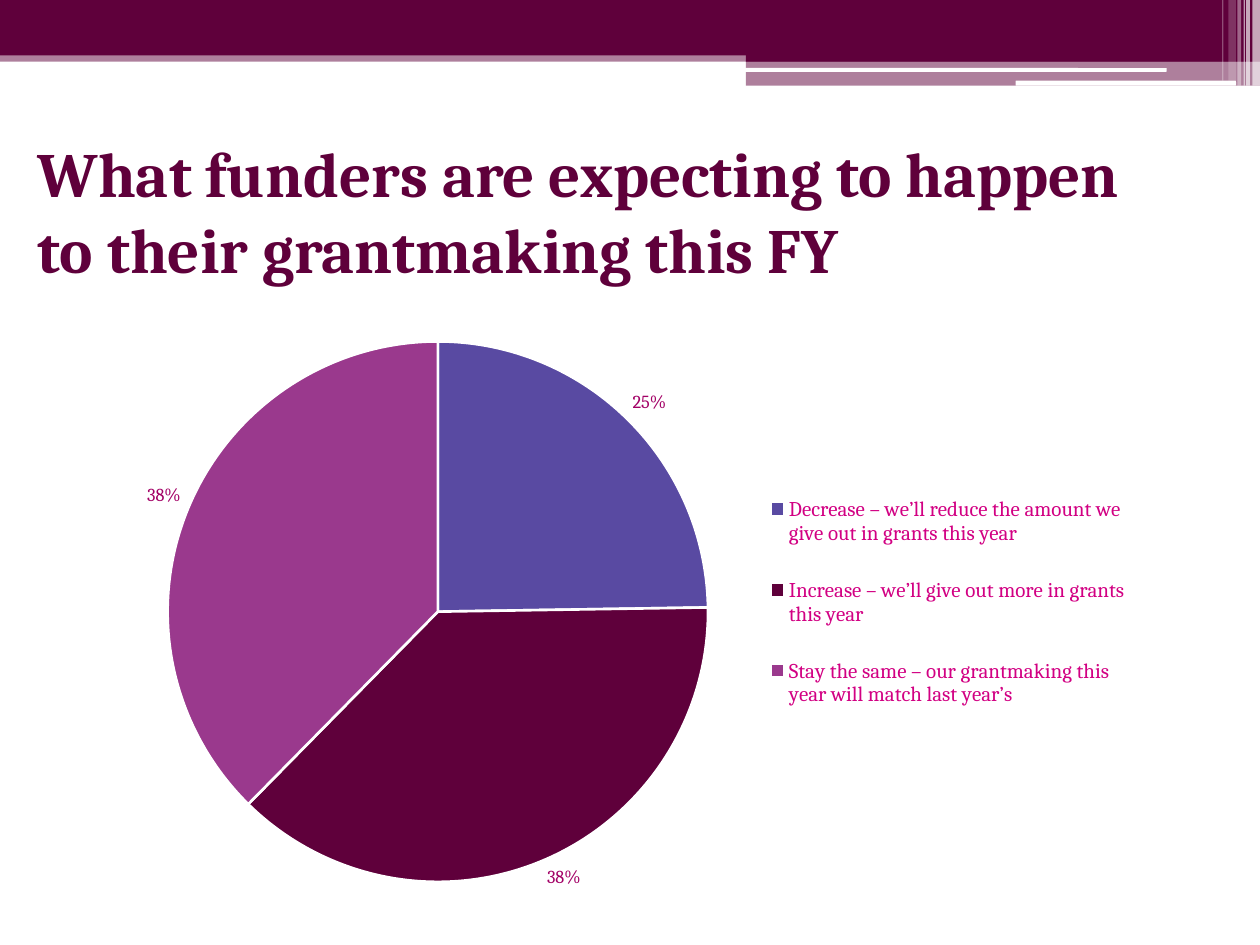
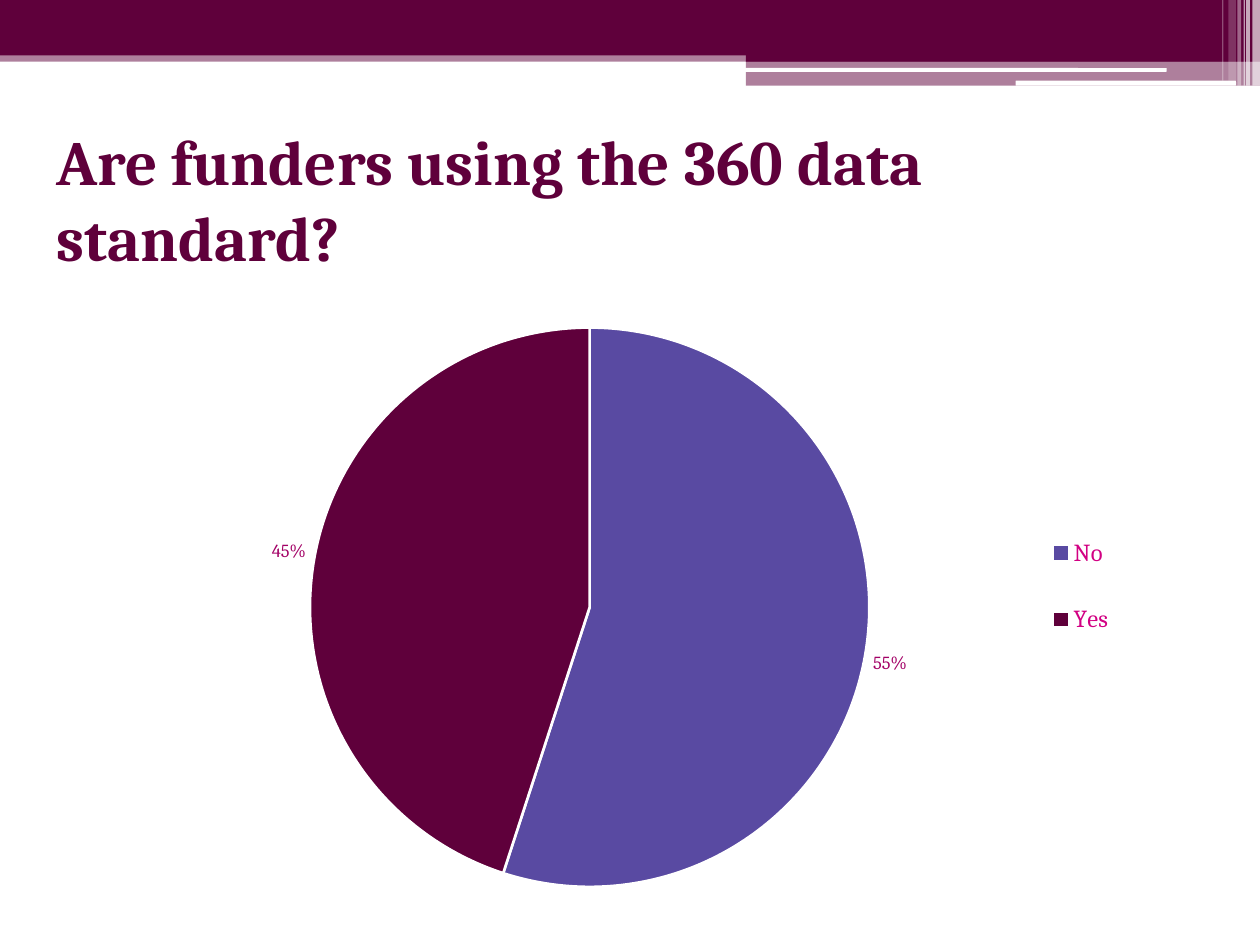
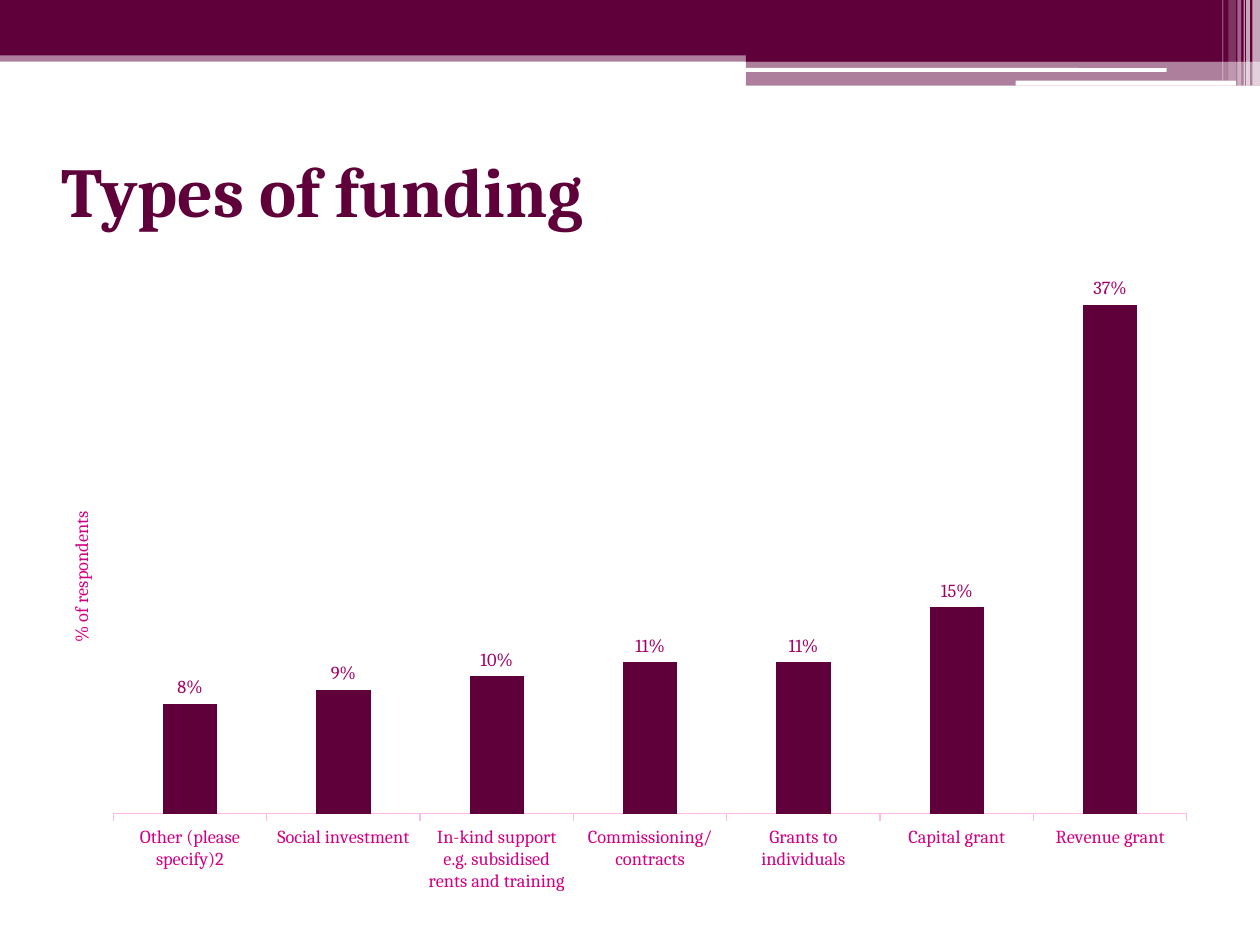
"""Build three slides of funder survey results with charts."""
from lxml.etree import SubElement
from pptx import Presentation
from pptx.chart.data import CategoryChartData
from pptx.dml.color import RGBColor
from pptx.enum.chart import (XL_CHART_TYPE as ChartType, XL_LABEL_POSITION as LabelPosition,
                             XL_LEGEND_POSITION as LegendPosition, XL_TICK_MARK as TickMark)
from pptx.enum.shapes import MSO_SHAPE as Shape
from pptx.enum.text import MSO_ANCHOR as Anchor, MSO_AUTO_SIZE as AutoSize, PP_ALIGN as Align
from pptx.oxml import parse_xml
from pptx.oxml.ns import nsdecls, qn
from pptx.util import Pt

EMU_PER_PX = 9144
FONT = "Cambria"
PLUM = RGBColor(0x5F, 0x00, 0x3B)
DARK_PLUM = RGBColor(0x30, 0x00, 0x1E)
INDIGO = RGBColor(0x59, 0x4A, 0xA2)
ORCHID = RGBColor(0x9A, 0x39, 0x8D)
MAGENTA = RGBColor(0xD2, 0x00, 0x83)
LABEL_RED = RGBColor(0xA3, 0x00, 0x66)
PALE_PINK = RGBColor(0xFF, 0xBA, 0xE5)
WHITE = RGBColor(0xFF, 0xFF, 0xFF)
SLICE_COLOURS = (INDIGO, PLUM, ORCHID)

BANDS = (
    ((0, 40, 1000, 9), PLUM, 50),
    ((0, 0, 1000, 34), PLUM, 100),
    ((0, 34, 1000, 10), PLUM, 100),
    ((592, 39, 408, 10), PLUM, 100),
    ((592, 48, 408, 20), PLUM, 50),
)
RULES = ((591, 54, 335, 3), (806, 64, 175, 4))
STRIPES = (
    ((994, 0, 6, 68), 65),
    ((989, 0, 3, 68), 65),
    ((987, 0, 1, 68), 60),
    ((982, 0, 3, 68), 40),
    ((975, 0, 6, 64), 20),
    ((970, 0, 1, 64), 30),
)


def px(*lengths):
    """Turn px lengths into EMU."""
    return [length * EMU_PER_PX for length in lengths]


def style_font(font, size, colour, bold=False):
    """Apply the deck font with a size and colour."""
    font.name, font.size, font.bold = FONT, Pt(size), bold
    font.color.rgb = colour


class Deck:
    """Hold the deck style and the current slide."""

    def __init__(self):
        """Start a deck whose layout carries the header."""
        self.presentation = Presentation()
        self.presentation.slide_width, self.presentation.slide_height = px(1000, 750)
        self.layout = self.presentation.slide_layouts[5]
        self.slide = None

    def add_slide(self, title, box, size=36):
        """Add a slide with its title."""
        first = self.slide is None
        self.slide = self.presentation.slides.add_slide(self.layout)
        if first:
            self.add_header()
        heading = self.slide.shapes.title
        heading.left, heading.top, heading.width, heading.height = px(*box)
        frame = heading.text_frame
        frame.text = title
        frame.auto_size = AutoSize.NONE
        frame.vertical_anchor = Anchor.MIDDLE
        paragraph = frame.paragraphs[0]
        paragraph.alignment = Align.LEFT
        style_font(paragraph.font, size, PLUM, bold=True)

    def add_header(self):
        """Put the bands, rules and stripes on the shared layout."""
        for box, colour, opacity in BANDS:
            self.add_band(Shape.RECTANGLE, box, colour, opacity)
        for box in RULES:
            self.add_band(Shape.ROUNDED_RECTANGLE, box, WHITE)
        for box, opacity in STRIPES:
            self.add_band(Shape.RECTANGLE, box, WHITE, opacity)

    def add_band(self, kind, box, colour, opacity=100):
        """Add one header shape to the layout."""
        band = self.slide.shapes.add_shape(kind, *px(*box))
        band.shadow.inherit = False
        band.line.fill.background()
        band.fill.solid()
        band.fill.fore_color.rgb = colour
        if opacity < 100:
            tint = band.element.xpath(".//a:srgbClr")[0]
            SubElement(tint, qn("a:alpha")).set("val", str(opacity * 1000))
        self.layout.shapes.element.append(band.element)

    def add_chart(self, kind, box, shares, size):
        """Add a one-series chart with percentage labels."""
        data = CategoryChartData(number_format="0%")
        data.categories = list(shares)
        data.add_series("Series 1", list(shares.values()))
        chart = self.slide.shapes.add_chart(kind, *px(*box), data).chart
        chart.has_title = False
        style_font(chart.font, size, DARK_PLUM)
        series = chart.plots[0].series[0]
        labels = series.data_labels
        labels.show_value = True
        labels.position = LabelPosition.OUTSIDE_END
        labels.number_format, labels.number_format_is_linked = "0%", False
        style_font(labels.font, 10.5, LABEL_RED)
        return chart, series

    def place_part(self, chart, part, box, area):
        """Fix a chart part at an area given in slide px."""
        left, top, width, height = box
        values = dict(zip("xywh", ((area[0] - left) / width, (area[1] - top) / height,
                                   *(n / whole for n, whole in zip(area[2:], (width, height))))))
        target = '<c:layoutTarget val="inner"/>' if part == "plotArea" else ""
        modes = '<c:xMode val="edge"/><c:yMode val="edge"/>'
        places = "".join(f'<c:{key} val="{value:.4f}"/>' for key, value in values.items())
        owner = chart.element.xpath(f".//c:{part}")[0]
        for old in owner.findall(qn("c:layout")):
            owner.remove(old)
        owner.insert(0 if part == "plotArea" else 1, parse_xml(
            f'<c:layout {nsdecls("c")}><c:manualLayout>{target}{modes}{places}'
            "</c:manualLayout></c:layout>"))

    def add_pie(self, box, shares, pie_area, legend_area, legend_size):
        """Add a pie chart with a legend at the right."""
        chart, series = self.add_chart(ChartType.PIE, box, shares, 10)
        for index, colour in enumerate(SLICE_COLOURS[:len(shares)]):
            piece = series.points[index].format
            piece.fill.solid()
            piece.fill.fore_color.rgb = colour
            piece.line.color.rgb = WHITE
            piece.line.width = Pt(1.5)
        chart.has_legend = True
        chart.legend.position = LegendPosition.RIGHT
        chart.legend.include_in_layout = False
        style_font(chart.legend.font, legend_size, MAGENTA)
        self.place_part(chart, "plotArea", box, pie_area)
        self.place_part(chart, "legend", box, legend_area)

    def add_columns(self, box, shares, plot_area, axis_title, title_spot):
        """Add a column chart with a hidden value axis."""
        chart, series = self.add_chart(ChartType.COLUMN_CLUSTERED, box, shares, 10.5)
        chart.has_legend = False
        plot = chart.plots[0]
        plot.gap_width, plot.vary_by_categories = 182, False
        series.format.fill.solid()
        series.format.fill.fore_color.rgb = PLUM
        types = chart.category_axis
        types.major_tick_mark = TickMark.OUTSIDE
        types.format.line.color.rgb = PALE_PINK
        types.format.line.width = Pt(0.75)
        style_font(types.tick_labels.font, 10.5, MAGENTA)
        respondents = chart.value_axis
        respondents.minimum_scale, respondents.maximum_scale = 0, 0.4
        respondents.has_major_gridlines = False
        respondents.visible = False
        caption = respondents.axis_title.text_frame
        caption.text = axis_title
        style_font(caption.paragraphs[0].font, 10.5, MAGENTA)
        self.place_part(chart, "plotArea", box, plot_area)
        self.place_part(chart, "title", box, title_spot)


def main():
    """Build and save the deck."""
    deck = Deck()
    deck.add_slide("What funders are expecting to happen to their grantmaking this FY",
                   (20, 92, 930, 150))
    deck.add_pie((35, 257, 900, 473), {
        "Decrease – we’ll reduce the amount we give out in grants this year": 0.25,
        "Increase – we’ll give out more in grants this year": 0.38,
        "Stay the same – our grantmaking this year will match last year’s": 0.38,
    }, (133, 271, 429, 429), (605, 369, 295, 219), 12)

    deck.add_slide("Are funders using the 360 data standard?", (35, 99, 900, 117))
    deck.add_pie((50, 246, 900, 473), {"No": 0.55, "Yes": 0.45},
                 (246, 260, 444, 444), (818, 398, 80, 135), 14)

    deck.add_slide("Types of funding", (39, 92, 900, 117), 40)
    deck.add_columns((28, 194, 934, 525), {
        "Other (please specify)2": 0.08,
        "Social investment": 0.09,
        "In-kind support e.g. subsidised rents and training": 0.1,
        "Commissioning/contracts": 0.11,
        "Grants to individuals": 0.11,
        "Capital grant": 0.15,
        "Revenue grant": 0.37,
    }, (90, 209, 852, 437), "% of respondents", (52, 403))
    deck.presentation.save("out.pptx")


if __name__ == "__main__":
    main()
